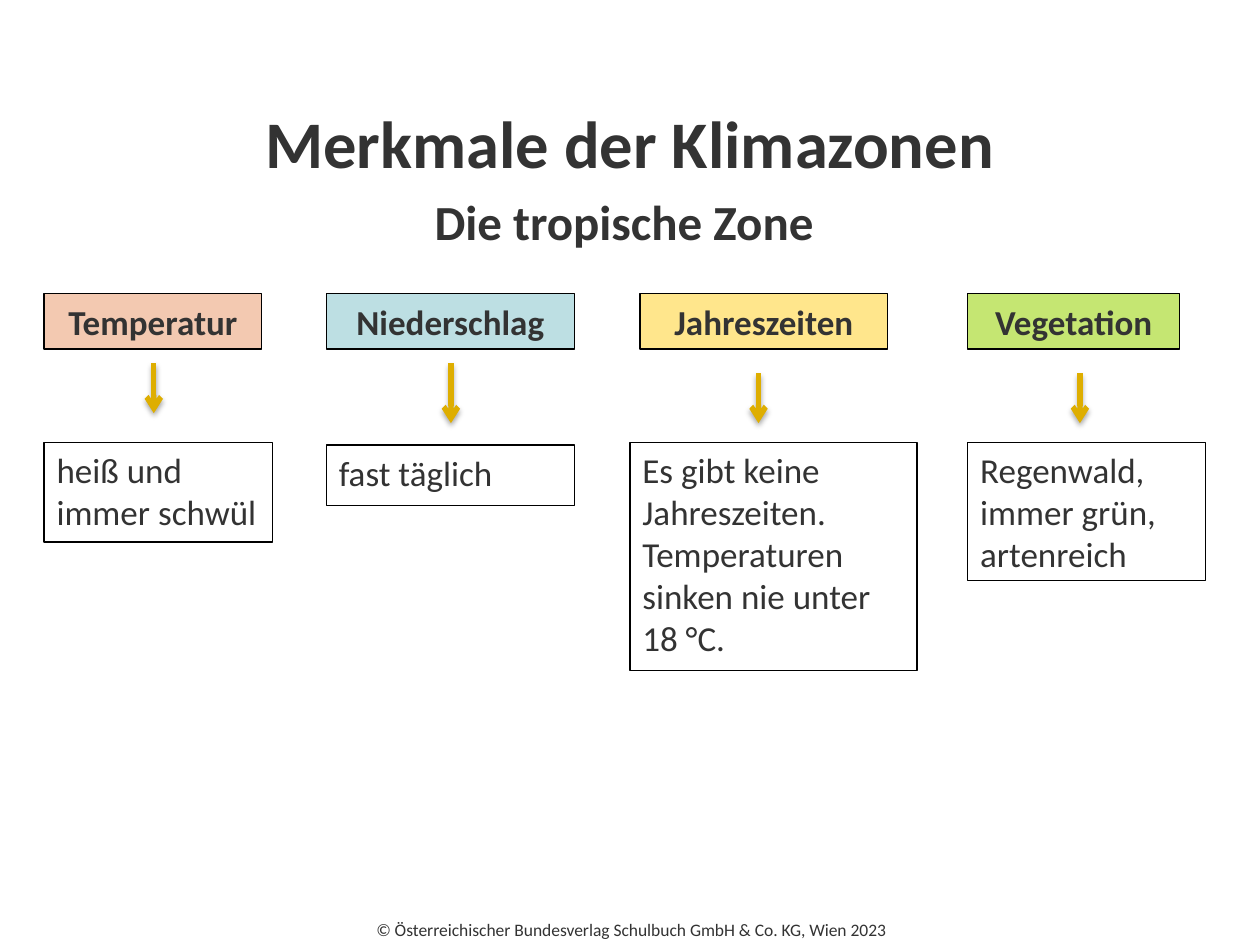
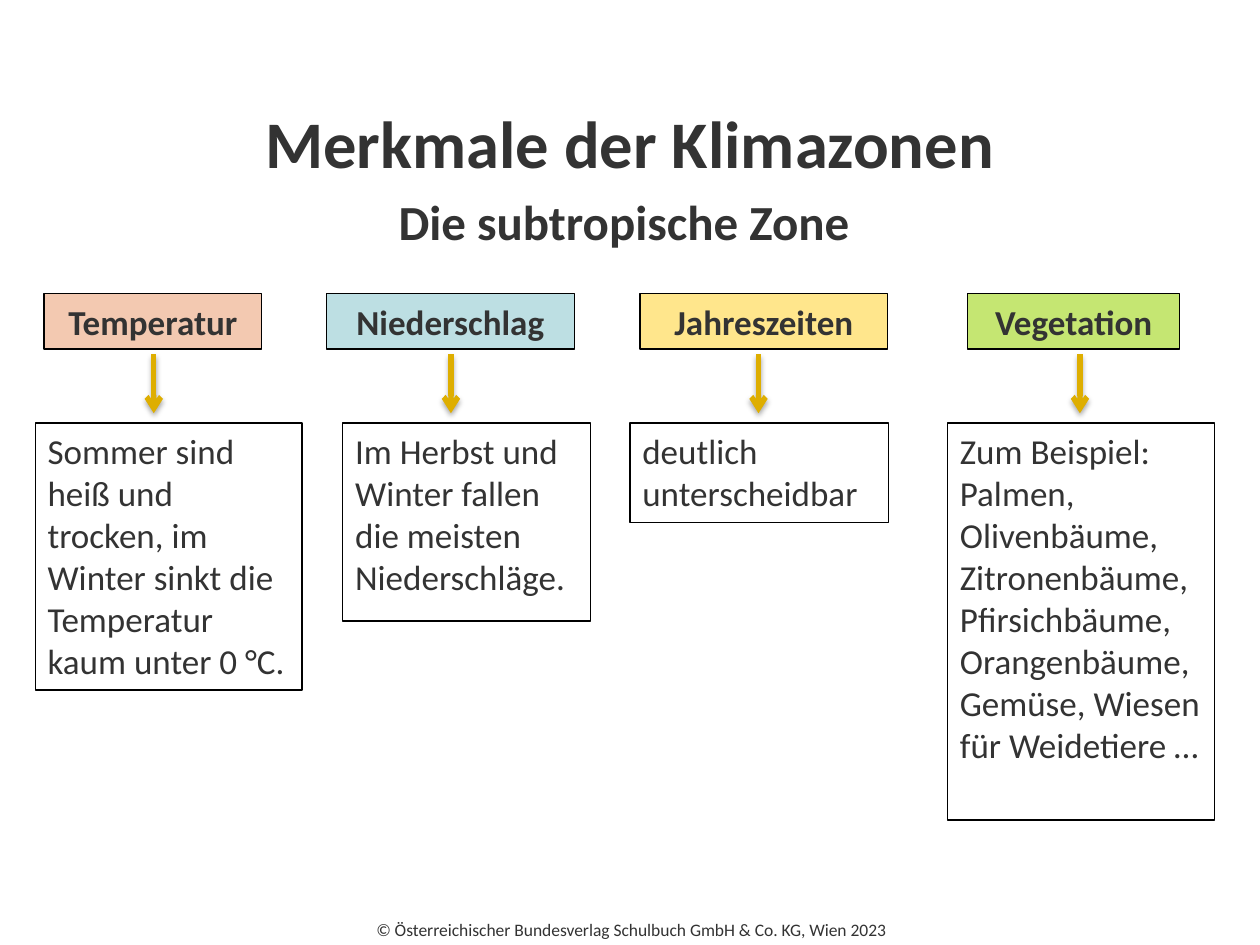
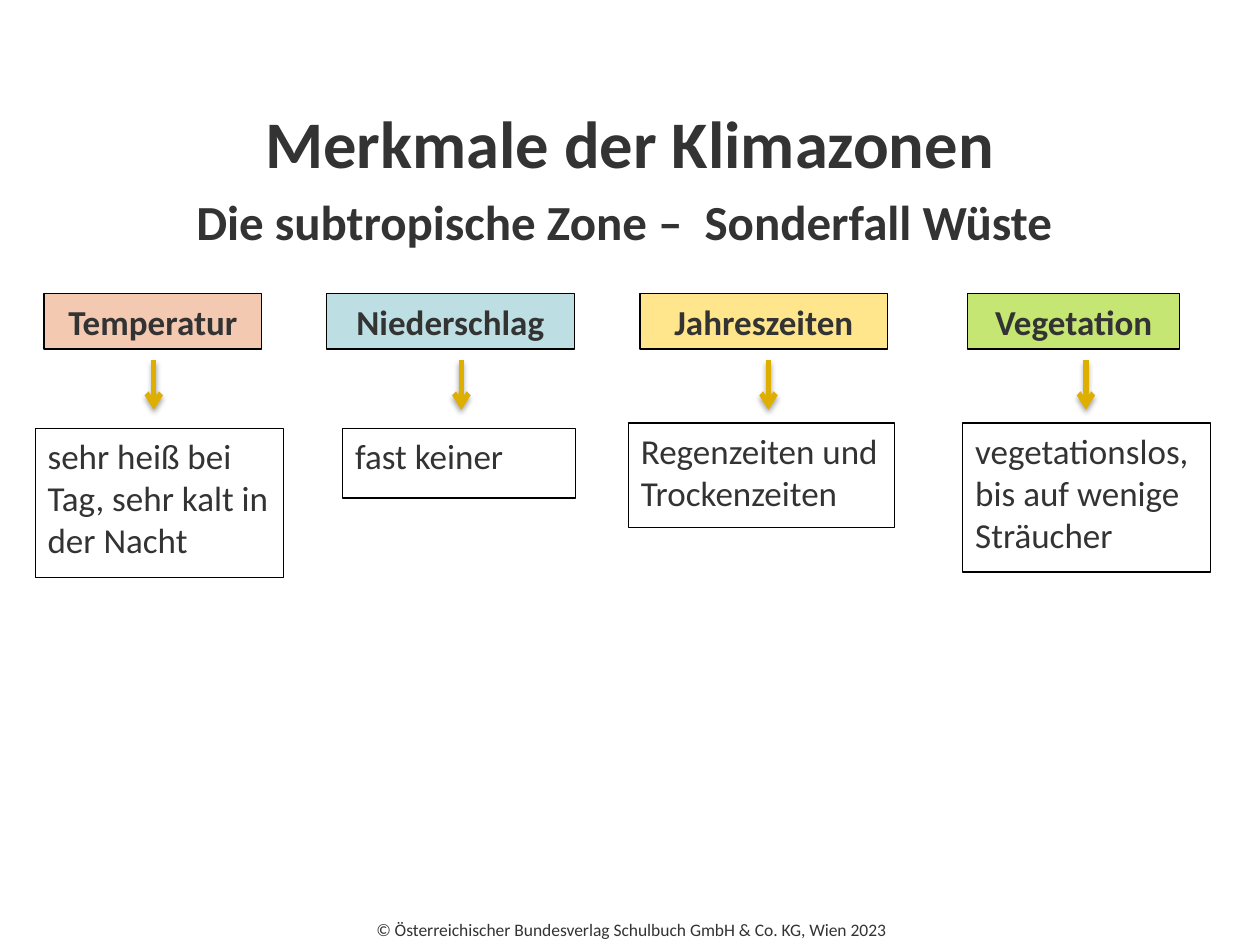
from lxml import etree
from pptx import Presentation
from pptx.dml.color import RGBColor
from pptx.enum.shapes import MSO_CONNECTOR, MSO_SHAPE
from pptx.enum.text import MSO_ANCHOR, MSO_AUTO_SIZE, PP_ALIGN
from pptx.oxml import parse_xml
from pptx.oxml.ns import nsdecls, qn
from pptx.util import Cm, Pt

RECT, STRAIGHT = MSO_SHAPE.RECTANGLE, MSO_CONNECTOR.STRAIGHT
TOP, MIDDLE = MSO_ANCHOR.TOP, MSO_ANCHOR.MIDDLE
LEFT, CENTER = PP_ALIGN.LEFT, PP_ALIGN.CENTER
NO_AUTOFIT = MSO_AUTO_SIZE.NONE

FONT = "Calibri"
COLORS = {
    "text": "333333", "border": "000000", "arrow": "DEAE00",
    "temperature": "F3C9B1", "rain": "BDDFE3",
    "seasons": "FFE68C", "plants": "C5E672",
}
SHADOW = (
    f'<a:effectLst {nsdecls("a")}>'
    '<a:outerShdw blurRad="39370" dist="22860" dir="5400000" rotWithShape="0">'
    '<a:srgbClr val="000000"><a:alpha val="35000"/></a:srgbClr>'
    '</a:outerShdw></a:effectLst>'
)

# Column headings: text, colour, left, width
HEADINGS = [
    ("Temperatur", "temperature", 0.89, 4.39),
    ("Niederschlag", "rain", 6.58, 5),
    ("Jahreszeiten", "seasons", 12.9, 5),
    ("Vegetation", "plants", 19.51, 4.27),
]

# Zones: subtitle, arrows (x, top, bottom), boxes (text, left, top, width, height)
ZONES = [
    ("Die tropische Zone ",
     [(3.1, 7.32, 8.33), (9.09, 7.32, 8.53), (15.29, 7.52, 8.53), (21.77, 7.52, 8.53)],
     [("heiß und immer schwül", 0.89, 8.92, 4.6, 2.01),
      ("fast täglich", 6.58, 8.97, 5, 1.22),
      ("Es gibt keine Jahreszeiten. Temperaturen sinken nie unter 18 °C.",
       12.7, 8.92, 5.79, 4.6),
      ("Regenwald, immer grün, artenreich", 19.51, 8.92, 4.8, 2.79)]),
    ("Die subtropische Zone ",
     [(x, 7.14, 8.33) for x in (3.1, 9.09, 15.29, 21.77)],
     [("Sommer sind heiß und trocken, im Winter sinkt die Temperatur kaum unter 0 °C.",
       0.71, 8.53, 5.38, 5.38),
      ("Im Herbst und Winter fallen die meisten Niederschläge.", 6.91, 8.53, 5, 3.99),
      ("deutlich unterscheidbar", 12.7, 8.53, 5.21, 2.01),
      ("Zum Beispiel: Palmen, Olivenbäume, Zitronenbäume, Pfirsichbäume, "
       "Orangenbäume, Gemüse, Wiesen für Weidetiere …", 19.1, 8.53, 5.38, 8)]),
    ("Die subtropische Zone –  Sonderfall Wüste ",
     [(x, 7.26, 8.26) for x in (3.1, 9.3, 15.49, 21.89)],
     [("sehr heiß bei Tag, sehr kalt in der Nacht", 0.71, 8.64, 5, 3),
      ("fast keiner", 6.91, 8.64, 4.7, 1.4),
      ("Regenzeiten und Trockenzeiten", 12.67, 8.53, 5.36, 2.11),
      ("vegetationslos, bis auf wenige Sträucher", 19.41, 8.53, 5, 3)]),
]


def write(sp, runs, align=LEFT, anchor=TOP, bold=False):
    """Fill a shape with one paragraph made of (text, size) runs."""
    tf = sp.text_frame
    tf.word_wrap = True
    tf.auto_size = NO_AUTOFIT
    tf.vertical_anchor = anchor
    p = tf.paragraphs[0]
    p.alignment = align
    p.space_before = Pt(0)
    for text, size in runs:
        r = p.add_run()
        r.text = text
        r.font.name = FONT
        r.font.size = Pt(size)
        r.font.bold = bold
        r.font.color.rgb = RGBColor.from_string(COLORS["text"])
    return p


def add_box(s, x, y, w, h, fill=None):
    """Add a thinly outlined rectangle, filled if a colour is given."""
    sp = s.shapes.add_shape(RECT, Cm(x), Cm(y), Cm(w), Cm(h))
    sp.shadow.inherit = False
    sp.line.color.rgb = RGBColor.from_string(COLORS["border"])
    sp.line.width = Pt(0.75)
    if fill:
        sp.fill.solid()
        sp.fill.fore_color.rgb = RGBColor.from_string(COLORS[fill])
    else:
        sp.fill.background()
    return sp


prs = Presentation()
prs.slide_width, prs.slide_height = Cm(25.4), Cm(19.05)
layout = prs.slide_layouts[1]

# Shared places of title and subtitle
for ph, place in zip(layout.placeholders, [(1.27, 1.93, 22.86, 1.88), (0.89, 3.73, 23.6, 1.6)]):
    ph.left, ph.top, ph.width, ph.height = map(Cm, place)

for number, (zone, arrows, boxes) in enumerate(ZONES):
    s = prs.slides.add_slide(layout)

    # Footer, moved to the layout so that every slide shows it
    if number == 0:
        footer = s.shapes.add_textbox(Cm(-0.05), Cm(18.11), Cm(25.4), Cm(1.02))
        copyright_line = "© Österreichischer Bundesverlag Schulbuch GmbH & Co. KG, Wien 2023"
        write(footer, [(" ", 18), (copyright_line, 10)], CENTER)
        layout.shapes._spTree.append(footer._element)

    # Title and subtitle
    write(s.shapes.title, [("Merkmale der Klimazonen", 38)], CENTER, MIDDLE, True)
    p = write(s.placeholders[1], [(zone, 28)], CENTER, TOP, True)
    pPr = p._p.get_or_add_pPr()
    pPr.set("marL", "0")
    pPr.set("indent", "0")
    etree.SubElement(pPr, qn("a:buNone"))

    # Arrows
    for x, top, bottom in arrows:
        arrow = s.shapes.add_connector(STRAIGHT, Cm(x), Cm(top), Cm(x), Cm(bottom))
        arrow.line.color.rgb = RGBColor.from_string(COLORS["arrow"])
        arrow.line.width = Pt(3)
        etree.SubElement(arrow.line._get_or_add_ln(), qn("a:tailEnd"), type="arrow")
        arrow._element.spPr.append(parse_xml(SHADOW))

    # Descriptions
    for text, x, y, w, h in boxes:
        write(add_box(s, x, y, w, h), [(text, 20)])

    # Column headings
    for text, fill, x, w in HEADINGS:
        write(add_box(s, x, 5.92, w, 1.12, fill), [(text, 20)], CENTER, MIDDLE, True)

prs.save("out.pptx")
